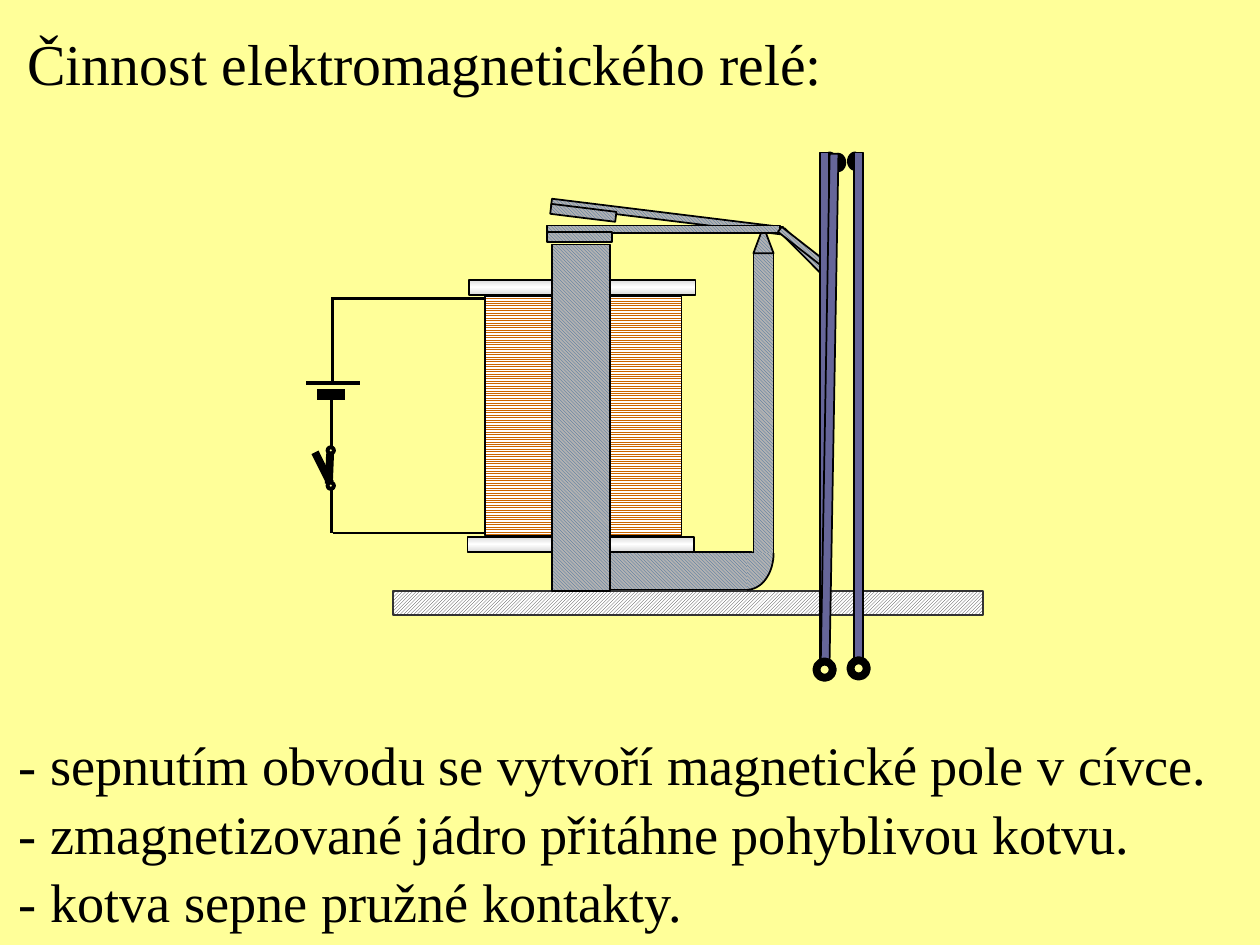
import math
from dataclasses import dataclass

import pptx
import pptx.util
import pptx.dml.color
import pptx.enum.dml
import pptx.enum.shapes
import pptx.enum.text
import pptx.oxml.ns
from copy import deepcopy
from lxml import etree

Inches = pptx.util.Inches
Pt = pptx.util.Pt
RGBColor = pptx.dml.color.RGBColor
Pattern = pptx.enum.dml.MSO_PATTERN
Preset = pptx.enum.shapes.MSO_SHAPE

PAPER = RGBColor(0xFF, 0xFF, 0x99)
BLACK = RGBColor(0x00, 0x00, 0x00)
WHITE = RGBColor(0xFF, 0xFF, 0xFF)
STEEL_LINES = RGBColor(0x33, 0x66, 0x99)
STEEL = RGBColor(0xB2, 0xB2, 0xB2)
COPPER = RGBColor(0xCC, 0x66, 0x00)
FLANGE = RGBColor(0xDA, 0xDA, 0xDA)
CHARCOAL = RGBColor(0x33, 0x33, 0x33)
SPRING = RGBColor(0x66, 0x66, 0x99)
FONT = "Times New Roman"


@dataclass(frozen=True)
class Hatch:
    pattern: int
    fore: RGBColor
    back: RGBColor


@dataclass(frozen=True)
class Gradient:
    edge: RGBColor
    middle: RGBColor


Paint = Hatch | Gradient | RGBColor | None

STEEL_HATCH = Hatch(Pattern.LIGHT_DOWNWARD_DIAGONAL, STEEL_LINES, STEEL)
WINDING = Hatch(Pattern.NARROW_HORIZONTAL, COPPER, WHITE)
BOARD = Hatch(Pattern.DARK_UPWARD_DIAGONAL, CHARCOAL, WHITE)
FLANGE_SHINE = Gradient(FLANGE, WHITE)


@dataclass(frozen=True)
class Part:
    left: float
    top: float
    width: float
    height: float
    paint: Paint = STEEL_HATCH
    rotation: float = 0
    weight: float = 1
    outline: RGBColor = BLACK
    preset: int = Preset.RECTANGLE


@dataclass(frozen=True)
class Wire:
    x1: float
    y1: float
    x2: float
    y2: float
    weight: float = 1.5


def apply_style(shape, paint: Paint, weight: float, outline: RGBColor = BLACK) -> None:
    """Paint a shape; a weight of 0 means no outline."""
    shape.shadow.inherit = False
    fill = shape.fill
    if isinstance(paint, Hatch):
        fill.patterned()
        fill.pattern = paint.pattern
        fill.fore_color.rgb, fill.back_color.rgb = paint.fore, paint.back
    elif isinstance(paint, Gradient):
        fill.gradient()
        fill.gradient_angle = 90
        first, last = fill.gradient_stops
        first.color.rgb, first.position = paint.edge, 0
        last.color.rgb, last.position = paint.middle, 0.5
        stops = shape._element.spPr.find(".//" + pptx.oxml.ns.qn("a:gsLst"))
        end = deepcopy(stops[0])
        end.set("pos", "100000")
        stops.append(end)
    elif paint is None:
        fill.background()
    else:
        fill.solid()
        fill.fore_color.rgb = paint
    if weight:
        shape.line.color.rgb = outline
        shape.line.width = Pt(weight)
    else:
        shape.line.fill.background()


def draw_part(slide, part: Part) -> None:
    shape = slide.shapes.add_shape(part.preset, Inches(part.left), Inches(part.top),
                                   Inches(part.width), Inches(part.height))
    shape.rotation = part.rotation
    apply_style(shape, part.paint, part.weight, part.outline)


def draw_wire(slide, wire: Wire) -> None:
    line = slide.shapes.add_connector(
        pptx.enum.shapes.MSO_CONNECTOR.STRAIGHT,
        Inches(wire.x1), Inches(wire.y1), Inches(wire.x2), Inches(wire.y2))
    line.line.color.rgb = BLACK
    line.line.width = Pt(wire.weight)
    etree.SubElement(line._element.spPr, pptx.oxml.ns.qn("a:effectLst"))


def draw_outline(slide, points: list, paint: Paint, weight: float = 1, close: bool = True) -> None:
    corners = [(Inches(x), Inches(y)) for x, y in points]
    builder = slide.shapes.build_freeform(*corners[0])
    builder.add_line_segments(corners[1:], close=close)
    apply_style(builder.convert_to_shape(), paint, weight)


def arc(cx: float, cy: float, rx: float, ry: float, start: int, end: int) -> list:
    """Points of an elliptic arc, in degrees clockwise from the right."""
    angles = [math.radians(start + (end - start) * i / 24) for i in range(25)]
    return [(cx + rx * math.cos(a), cy + ry * math.sin(a)) for a in angles]


def draw_contact(slide, x: float, y: float, start: int) -> None:
    draw_outline(slide, arc(x, y, 0.06, 0.07, start, start + 180), BLACK)


def draw_text(slide, left: float, top: float, width: float, height: float,
              lines: list, size: float, inset: float, wrap: bool) -> None:
    frame = slide.shapes.add_textbox(Inches(left), Inches(top), Inches(width), Inches(height)).text_frame
    frame.word_wrap = wrap
    frame.margin_left = frame.margin_right = Inches(inset)
    frame.text = "\n".join(lines)
    for paragraph in frame.paragraphs:
        paragraph.line_spacing = 1.05
        font = paragraph.runs[0].font
        font.name, font.size, font.color.rgb = FONT, Pt(size), BLACK


def main() -> None:
    deck = pptx.Presentation()
    deck.slide_width, deck.slide_height = Inches(10), Inches(7.5)
    slide = deck.slides.add_slide(deck.slide_layouts[6])
    slide.background.fill.solid()
    slide.background.fill.fore_color.rgb = PAPER

    draw_text(slide, 0.12, 0.14, 6.51, 0.65, ["Činnost elektromagnetického relé:"], 33, 0.1, True)

    # Armature at rest, coil, base board and yoke
    for part in (
        Part(4.37, 1.69, 1.85, 0.06, rotation=7),
        Part(4.37, 1.65, 0.52, 0.08, rotation=7),
        Part(6.14, 1.97, 0.47, 0.05, rotation=45),
        Part(3.72, 2.22, 1.8, 0.12, FLANGE_SHINE),
        Part(3.71, 4.26, 1.8, 0.12, FLANGE_SHINE),
        Part(3.85, 2.35, 1.56, 1.9, WINDING),
        Part(3.12, 4.69, 4.68, 0.19, BOARD, weight=1.25, outline=CHARCOAL),
        Part(4.83, 4.38, 1.14, 0.3),
        Part(5.98, 2.01, 0.16, 2.4),
    ):
        draw_part(slide, part)

    # Rounded yoke corner, pivot tip and core
    corner = arc(5.93, 4.39, 0.21, 0.29, 0, 90)
    draw_outline(slide, corner + [(5.93, 4.39)], STEEL_HATCH, weight=0)
    draw_outline(slide, corner, None, close=False)
    draw_outline(slide, [(5.98, 2.01), (6.04, 1.85), (6.08, 1.85), (6.14, 2.01)], STEEL_HATCH)
    draw_part(slide, Part(4.38, 1.94, 0.46, 2.75))

    # Circuit with battery and switch (open and closed positions)
    for wire in (
        Wire(3.85, 2.37, 2.64, 2.37),
        Wire(3.85, 4.23, 2.64, 4.23),
        Wire(2.43, 3.04, 2.86, 3.04, 2.25),
        Wire(2.52, 3.13, 2.74, 3.13, 6),
        Wire(2.64, 2.36, 2.64, 3.03),
        Wire(2.63, 3.55, 2.63, 3.13),
        Wire(2.63, 3.89, 2.63, 4.23),
        Wire(2.62, 3.83, 2.5, 3.59, 4.5),
        Wire(2.62, 3.6, 2.61, 3.84, 4.5),
    ):
        draw_wire(slide, wire)
    for top in (3.83, 3.55):
        draw_part(slide, Part(2.6, top, 0.05, 0.05, None, weight=2.25, preset=Preset.OVAL))

    # Attracted armature
    draw_part(slide, Part(4.34, 1.79, 1.85, 0.06))
    draw_part(slide, Part(4.34, 1.84, 0.52, 0.08))
    draw_part(slide, Part(6.14, 1.94, 0.47, 0.05, rotation=38))

    # Spring contacts: fixed, at rest, and pushed
    for contact_x, contact_y, start, blade_left, blade_top, tilt in (
        (6.79, 1.28, 90, 6.78, 1.21, 0),
        (6.58, 1.28, -90, 6.51, 1.21, 0),
        (6.65, 1.29, -90, 6.55, 1.22, 1),
    ):
        draw_contact(slide, contact_x, contact_y, start)
        draw_part(slide, Part(blade_left, blade_top, 0.07, 4.03, SPRING, tilt))
    for left, top in ((6.75, 5.24), (6.48, 5.25)):
        draw_part(slide, Part(left, top, 0.13, 0.13, None, weight=4.5, preset=Preset.OVAL))

    draw_text(slide, 0.13, 5.73, 9.49, 1.65, [
        "- sepnutím obvodu se vytvoří magnetické pole v cívce.",
        "- zmagnetizované jádro přitáhne pohyblivou kotvu.",
        "- kotva sepne pružné kontakty.",
    ], 31, 0.02, False)

    deck.save("out.pptx")


if __name__ == "__main__":
    main()
